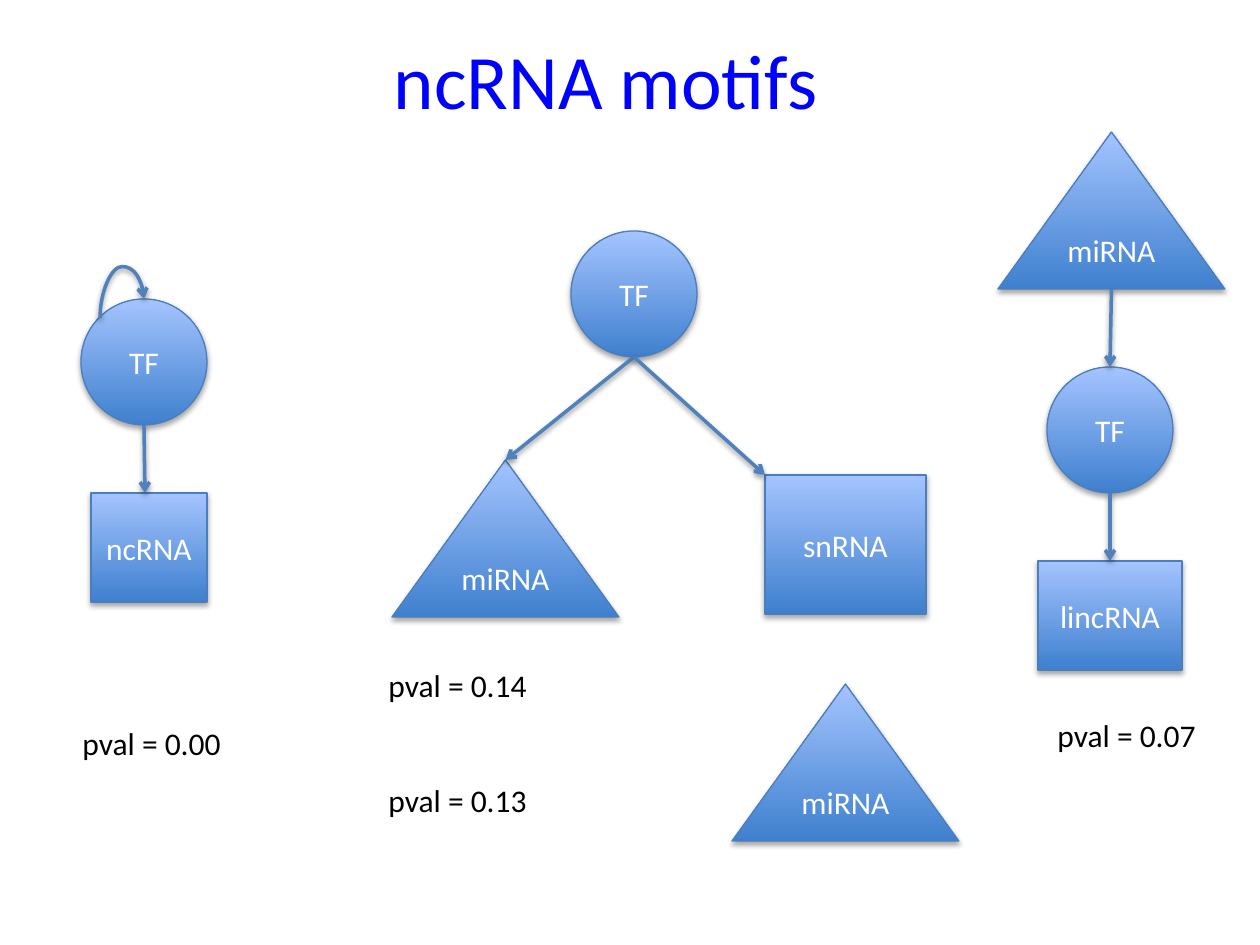
from lxml.etree import SubElement
from pptx import Presentation
from pptx.dml.color import RGBColor
from pptx.enum.shapes import MSO_CONNECTOR as LINK, MSO_SHAPE as SHAPE
from pptx.enum.text import MSO_ANCHOR as ANCHOR, PP_ALIGN as ALIGN
from pptx.oxml.ns import qn
from pptx.util import Emu, Pt

PX = 914400 / 126
FONT = "Calibri"

TITLE = ("ncRNA motifs", (39, 0, 1134, 158))
CIRCLE, TRIANGLE = (126, 126), (227, 157)
# name: shape, label, left and top, size
NODES = {
    "auto TF": (SHAPE.OVAL, "TF", (81, 299), CIRCLE),
    "ncRNA": (SHAPE.RECTANGLE, "ncRNA", (91, 493), (116, 109)),
    "top miRNA": (SHAPE.ISOSCELES_TRIANGLE, "miRNA", (998, 132), TRIANGLE),
    "chain TF": (SHAPE.OVAL, "TF", (1047, 367), CIRCLE),
    "lincRNA": (SHAPE.RECTANGLE, "lincRNA", (1038, 561), (144, 109)),
    "fork TF": (SHAPE.OVAL, "TF", (571, 231), CIRCLE),
    "snRNA": (SHAPE.RECTANGLE, "snRNA", (765, 475), (161, 139)),
    "fork miRNA": (SHAPE.ISOSCELES_TRIANGLE, "miRNA", (392, 460), TRIANGLE),
    "lone miRNA": (SHAPE.ISOSCELES_TRIANGLE, "miRNA", (732, 684), TRIANGLE),
}
# start node (from its bottom), end: a node (at its top) or a point
ARROWS = [
    ("auto TF", (145, 493)),
    ("chain TF", "lincRNA"),
    ("top miRNA", "chain TF"),
    ("fork TF", "fork miRNA"),
    ("fork TF", (765, 475)),
]
LOOP_START, LOOP_END, LOOP_BEND = (100, 318), (144, 299), 270700
# lines, left, top, height
PVALUES = [
    ([" pval = 0.00"], 63, 718, 51),
    ([" pval = 0.07"], 1038, 710, 51),
    ([" pval = 0.14", " pval = 0.13"], 369, 660, 165),
]
PVALUE_WIDTH, PVALUE_GAP = 249, 44


def px(*values):
    return [Emu(round(value * PX)) for value in values]


def color(text):
    return RGBColor.from_string(text)


def style(para, size, ink, align):
    para.alignment = align
    para.font.name, para.font.size = FONT, Pt(size)
    para.font.color.rgb = color(ink)


def add_shadow(effects, distance, alpha):
    shadow = SubElement(effects, qn("a:outerShdw"), blurRad="40000",
                        dist=str(distance), dir="5400000", rotWithShape="0")
    black = SubElement(shadow, qn("a:srgbClr"), val="000000")
    SubElement(black, qn("a:alpha"), val=str(alpha * 1000))


def add_node(page, kind, label, corner, size):
    node = page.shapes.add_shape(kind, *px(*corner, *size))
    node.fill.gradient()
    node.fill.gradient_angle = 90
    for stop, shade in zip(node.fill.gradient_stops, ("3F80CE", "A4C4FF")):
        stop.color.rgb = color(shade)
    node.line.color.rgb, node.line.width = color("4B7EBC"), Pt(0.75)
    node.shadow.inherit = False
    add_shadow(node._element.spPr.find(qn("a:effectLst")), 23000, 35)
    frame = node.text_frame
    frame.text, frame.vertical_anchor = label, ANCHOR.MIDDLE
    frame.word_wrap = False
    style(frame.paragraphs[0], 18, "FFFFFF", ALIGN.CENTER)
    return node


def add_arrow(page, kind, start, end):
    arrow = page.shapes.add_connector(kind, *px(*start, *end))
    arrow.line.color.rgb, arrow.line.width = color("4F81BD"), Pt(2)
    SubElement(arrow.line._get_or_add_ln(), qn("a:tailEnd"), type="arrow")
    add_shadow(SubElement(arrow._element.spPr, qn("a:effectLst")), 20000, 38)
    return arrow


deck = Presentation()
deck.slide_width, deck.slide_height = px(1260, 945)
page = deck.slides.add_slide(deck.slide_layouts[5])

# Title
heading, place = TITLE
title = page.shapes.title
title.left, title.top, title.width, title.height = px(*place)
title.text_frame.text = heading
title.text_frame.vertical_anchor = ANCHOR.MIDDLE
style(title.text_frame.paragraphs[0], 44, "0000FF", ALIGN.CENTER)

# Nodes and the straight arrows between them
nodes = {name: add_node(page, *node) for name, node in NODES.items()}
for source, target in ARROWS:
    (left, top), (width, height) = NODES[source][2:]
    start = (left + width / 2, top + height)
    if target in nodes:
        (left, top), (width, height) = NODES[target][2:]
        arrow = add_arrow(page, LINK.STRAIGHT, start, (left + width / 2, top))
        arrow.end_connect(nodes[target], 0)
    else:
        add_arrow(page, LINK.STRAIGHT, start, target)

# Self-regulation loop: a curve laid out sideways, then turned by 90 degrees
(x1, y1), (x2, y2) = LOOP_START, LOOP_END
mid_x, mid_y = (x1 + x2) / 2, (y1 + y2) / 2
half_w, half_h = (y1 - y2) / 2, (x2 - x1) / 2
loop = add_arrow(page, LINK.CURVE, (mid_x + half_w, mid_y + half_h),
                 (mid_x - half_w, mid_y - half_h))
properties = loop._element.spPr
properties.find(qn("a:xfrm")).set("rot", "5400000")
geometry = properties.find(qn("a:prstGeom"))
guides = geometry.find(qn("a:avLst"))
if guides is None:
    guides = SubElement(geometry, qn("a:avLst"))
SubElement(guides, qn("a:gd"), name="adj1", fmla=f"val {LOOP_BEND}")

# P-values
for lines, left, top, height in PVALUES:
    box = page.shapes.add_textbox(*px(left, top, PVALUE_WIDTH, height))
    frame = box.text_frame
    frame.word_wrap = True
    for index, line in enumerate(lines):
        para = frame.add_paragraph() if index else frame.paragraphs[0]
        para.text = line
        para.space_before = Pt(PVALUE_GAP if index else 0)
        style(para, 18, "000000", ALIGN.LEFT)

deck.save("out.pptx")
